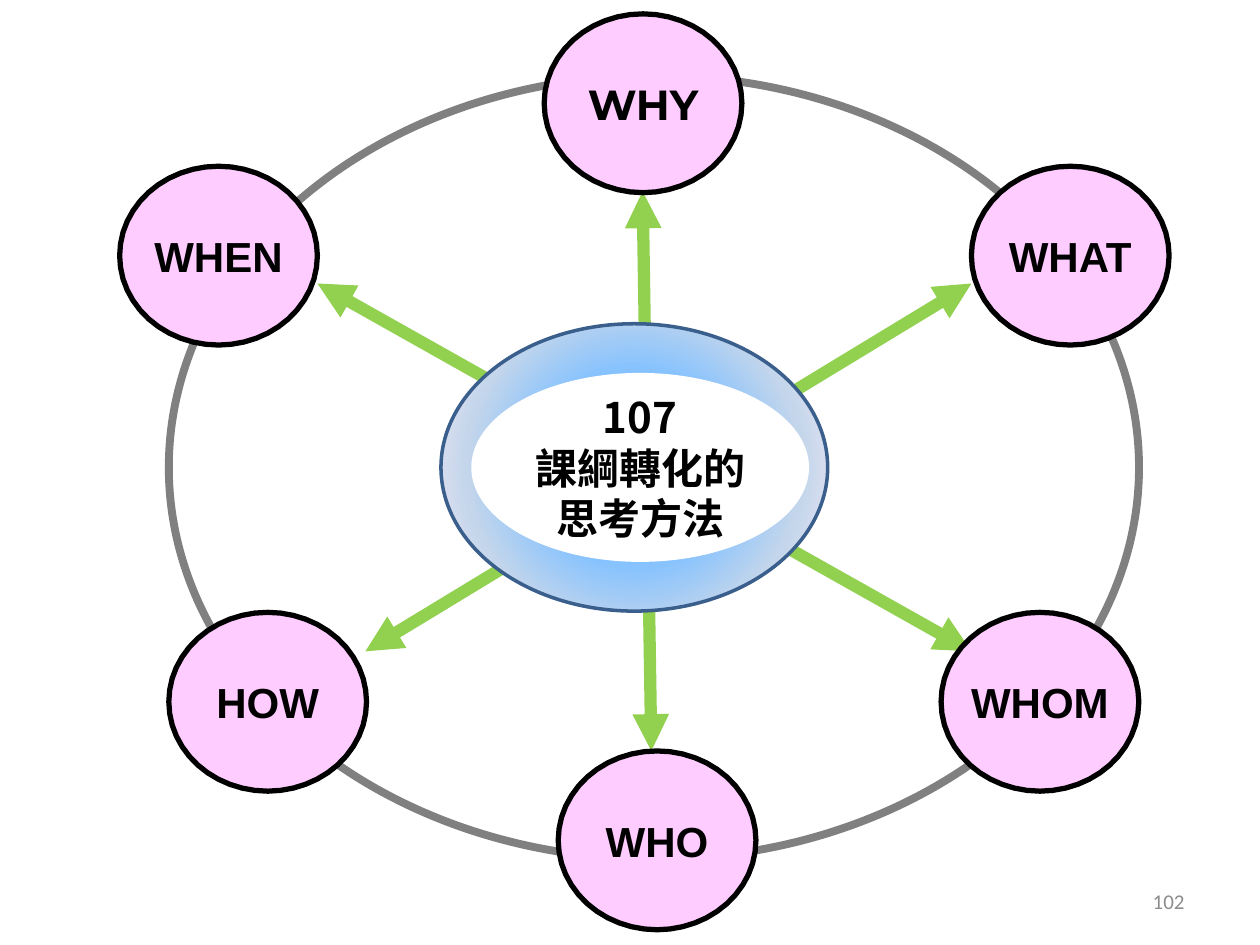
import pptx
import pptx.util
import pptx.dml.color
import pptx.enum.shapes
import pptx.enum.text
import pptx.oxml
import pptx.oxml.ns
from lxml import etree

Pt = pptx.util.Pt
RGBColor = pptx.dml.color.RGBColor
SHAPE = pptx.enum.shapes.MSO_SHAPE
ALIGN = pptx.enum.text.PP_ALIGN
MIDDLE = pptx.enum.text.MSO_ANCHOR.MIDDLE
qn = pptx.oxml.ns.qn

GREEN = RGBColor(0x92, 0xD0, 0x50)
GRAY = RGBColor(0x80, 0x80, 0x80)
NUMBER_GRAY = RGBColor(0x8C, 0x8C, 0x8C)
NAVY = RGBColor(0x3A, 0x5F, 0x8C)
PINK = RGBColor(0xFF, 0xCC, 0xFF)
BLACK = RGBColor(0, 0, 0)
WHITE = RGBColor(0xFF, 0xFF, 0xFF)
HUB_STOPS = [
    (0, RGBColor(0x5E, 0x9E, 0xFF)),
    (40, RGBColor(0x85, 0xC2, 0xFF)),
    (70, RGBColor(0xC4, 0xD6, 0xEB)),
    (100, RGBColor(0xFF, 0xEB, 0xFA)),
]

NODE_W, NODE_H = 113, 102.2
NODES = [
    ("WHOM", 537.8, 349.9, "Arial"),
    ("WHEN", 68.4, 95, "Arial"),
    ("HOW", 96.5, 349.9, "Arial"),
    ("WHAT", 555.1, 95, "Arial"),
    ("WHO", 319, 429.1, "Arial"),
    ("WHY", 311, 7.9, "Montserrat"),
]
SPOKES = [
    (181.4, 162, 555.1, 372.2),
    (555.1, 162, 208.8, 372.2),
    (367.2, 109.4, 372.2, 429.1),
]


def add_outline(shapes, kind, box, fill=None, line=None, width=0):
    s = shapes.add_shape(kind, *map(Pt, box))
    s.shadow.inherit = False
    if fill is None:
        s.fill.background()
    else:
        s.fill.solid()
        s.fill.fore_color.rgb = fill
    if line is None:
        s.line.fill.background()
    else:
        s.line.color.rgb = line
        s.line.width = Pt(width)
    return s


def write(s, lines, size, name, color, bold=False, align=ALIGN.CENTER, wrap=True):
    tf = s.text_frame
    tf.word_wrap = wrap
    tf.vertical_anchor = MIDDLE
    tf.text = "\n".join(lines)
    for p in tf.paragraphs:
        p.alignment = align
        p.font.size = Pt(size)
        p.font.name = name
        p.font.bold = bold
        p.font.color.rgb = color
        for r in p.runs:
            ea = etree.SubElement(r._r.get_or_add_rPr(), qn("a:ea"))
            ea.set("typeface", name)


def fill_radial(s, stops):
    s.fill.gradient()
    grad = s._element.spPr.find(qn("a:gradFill"))
    for child in list(grad):
        grad.remove(child)
    gs_list = etree.SubElement(grad, qn("a:gsLst"))
    for pos, color in stops:
        gs = etree.SubElement(gs_list, qn("a:gs"), pos=str(pos * 1000))
        etree.SubElement(gs, qn("a:srgbClr"), val=str(color))
    path = etree.SubElement(grad, qn("a:path"), path="circle")
    center = dict.fromkeys("ltrb", "50000")
    etree.SubElement(path, qn("a:fillToRect"), **center)


def add_spoke(shapes, ends):
    s = shapes.add_connector(pptx.enum.shapes.MSO_CONNECTOR.STRAIGHT, *map(Pt, ends))
    s.line.color.rgb = GREEN
    s.line.width = Pt(7)
    ln = s.line._get_or_add_ln()
    for tag in ("a:headEnd", "a:tailEnd"):
        etree.SubElement(ln, qn(tag), type="triangle")
    etree.SubElement(s._element.spPr, qn("a:effectLst"))


def add_hub(shapes, x, y, w, h):
    group = shapes.add_group_shape().shapes
    rim = add_outline(group, SHAPE.OVAL, (x, y, w, h), WHITE, NAVY, 2)
    fill_radial(rim, HUB_STOPS)
    disc = add_outline(group, SHAPE.OVAL, (x + 17.3, y + 28.1, w - 28, h - 56.2), WHITE)
    write(disc, ["107", "課綱轉化的思考方法"], 24, "Noto Sans CJK SC", BLACK, bold=True)


def add_node(shapes, label, x, y, font):
    s = add_outline(shapes, SHAPE.STAR_24_POINT, (x, y, NODE_W, NODE_H), PINK, BLACK, 3)
    s.adjustments[0] = 0.5
    write(s, [label], 24, font, BLACK, bold=True, wrap=False)


def add_page_number(shapes, x, y, w, h):
    s = shapes.add_textbox(Pt(x), Pt(y), Pt(w), Pt(h))
    write(s, ["102"], 12, "Calibri", NUMBER_GRAY, align=ALIGN.RIGHT)


def add_wheel(shapes, x, y, w, h):
    for ends in SPOKES:
        add_spoke(shapes, ends)
    add_outline(shapes, SHAPE.OVAL, (x, y, w, h), line=GRAY, width=4.5)
    add_hub(shapes, x + 155.5, y + 141.8, 221, 164.2)
    for node in NODES:
        add_node(shapes, *node)


def main():
    prs = pptx.Presentation()
    prs.slide_width, prs.slide_height = Pt(720), Pt(540)
    shapes = prs.slides.add_slide(prs.slide_layouts[6]).shapes
    add_wheel(shapes, 96.5, 43.2, 554.4, 447.8)
    add_page_number(shapes, 516.2, 500.4, 167.8, 28.8)
    prs.save("out.pptx")


if __name__ == "__main__":
    main()
